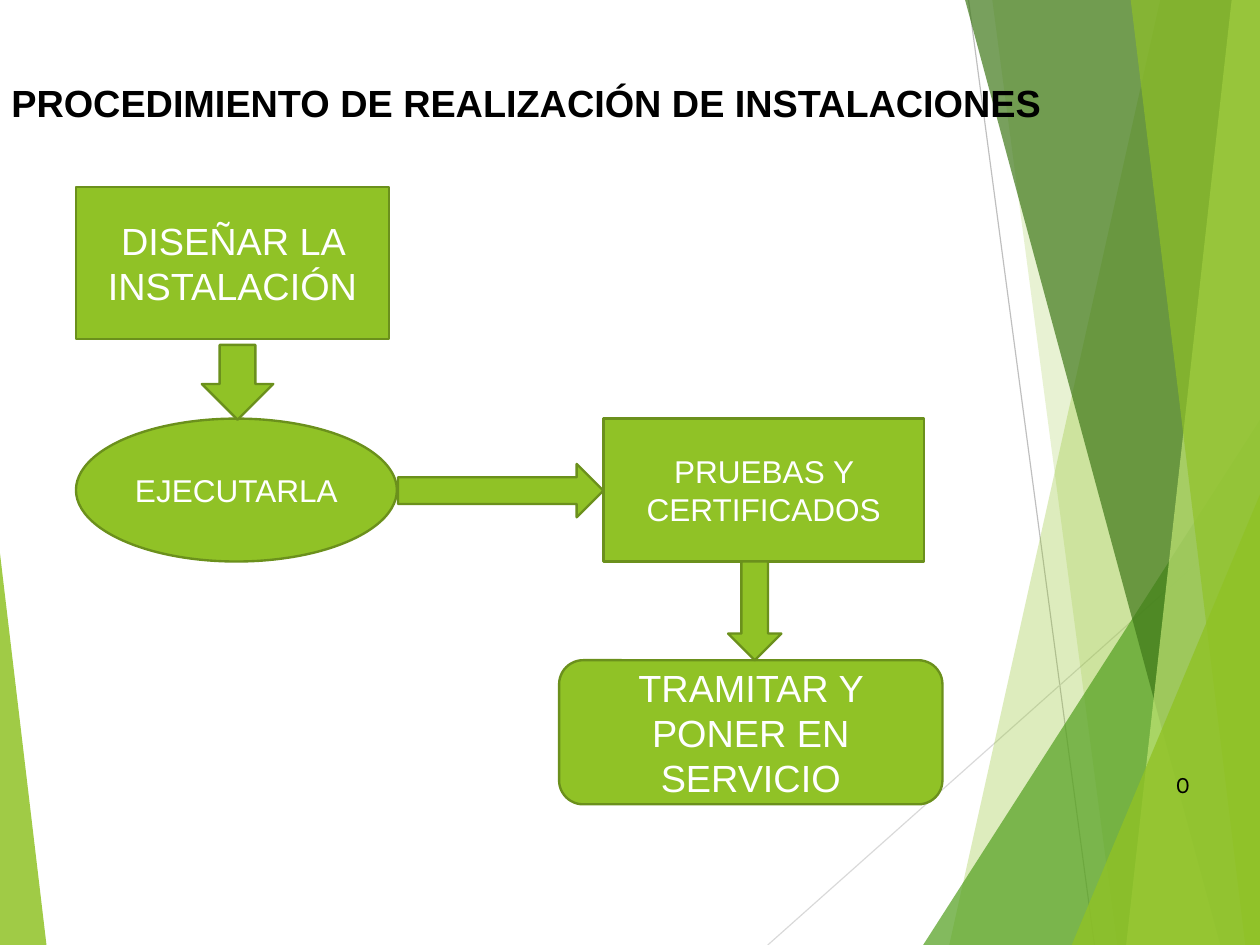
from lxml.etree import SubElement
from pptx import Presentation
from pptx.dml.color import RGBColor
from pptx.enum.shapes import MSO_CONNECTOR, MSO_SHAPE
from pptx.enum.text import MSO_ANCHOR, MSO_AUTO_SIZE, PP_ALIGN
from pptx.oxml.ns import qn
from pptx.util import Inches, Pt

COLORS = {
    "green": "90C226",
    "outline": "6B901C",
    "leaf": "54A021",
    "forest": "3F7819",
    "lime": "C0E474",
    "gray": "BFBFBF",
    "light gray": "D9D9D9",
    "white": "FFFFFF",
    "black": "000000",
}
WIDTH, HEIGHT = 11.11, 8.33


def color(name):
    return RGBColor.from_string(COLORS[name])


def fill_facet(shape, color_name, opacity):
    shape.shadow.inherit = False
    shape.line.fill.background()
    shape.fill.solid()
    shape.fill.fore_color.rgb = color(color_name)
    color_element = shape.element.spPr.find(qn("a:solidFill"))[0]
    SubElement(color_element, qn("a:alpha")).set("val", str(opacity * 1000))


presentation = Presentation()
presentation.slide_width = Inches(WIDTH)
presentation.slide_height = Inches(HEIGHT)
slide = presentation.slides.add_slide(presentation.slide_layouts[5])
shapes = slide.shapes

for start_x, start_y, end_x, color_name in [
    (8.54, 0, 9.65, "gray"),
    (WIDTH, 4.47, 6.77, "light gray"),
]:
    connector = shapes.add_connector(
        MSO_CONNECTOR.STRAIGHT,
        Inches(start_x), Inches(start_y), Inches(end_x), Inches(HEIGHT),
    )
    connector.line.color.rgb = color(color_name)
    connector.line.width = Pt(0.75)
    SubElement(connector.element.spPr, qn("a:effectLst"))

facets = [
    ("band", 10.23, 8.37, "green", 30),
    ("band", 8.75, 9.85, "green", 20),
    ("triangle", 8.14, 3.7, 2.97, 1, "leaf", 72),
    ("band", 8.51, 10.76, "forest", 70),
    ("band", 10.86, 9.93, "lime", 70),
    ("band", 9.97, 10.98, "green", 65),
    ("triangle", 9.45, 4.36, 1.66, 1, "green", 80),
    ("triangle", 0, 4.88, 0.41, 0, "green", 85),
]
for kind, *geometry, color_name, opacity in facets:
    if kind == "band":
        top_x, bottom_x = geometry
        builder = shapes.build_freeform(Inches(top_x), 0)
        corners = [(WIDTH, 0), (WIDTH, HEIGHT), (bottom_x, HEIGHT)]
        builder.add_line_segments([(Inches(x), Inches(y)) for x, y in corners])
        facet = builder.convert_to_shape()
    else:
        left, top, width, apex = geometry
        facet = shapes.add_shape(
            MSO_SHAPE.ISOSCELES_TRIANGLE,
            Inches(left), Inches(top), Inches(width), Inches(HEIGHT - top),
        )
        facet.adjustments[0] = apex
    fill_facet(facet, color_name, opacity)

page_number = shapes.add_textbox(Inches(10.27), Inches(6.74), Inches(0.47), Inches(0.35))
page_number.text_frame.word_wrap = True
paragraph = page_number.text_frame.paragraphs[0]
paragraph.text = "0"
paragraph.font.name = "Karla"
paragraph.font.size = Pt(15)
paragraph.font.color.rgb = color("black")

title = shapes.title
title.left, title.top = Inches(0), Inches(0.65)
title.width, title.height = Inches(9.29), Inches(0.73)
title.text_frame.auto_size = MSO_AUTO_SIZE.NONE
title.text_frame.vertical_anchor = MSO_ANCHOR.TOP
title.text_frame.margin_right = 0
paragraph = title.text_frame.paragraphs[0]
paragraph.text = "PROCEDIMIENTO DE REALIZACIÓN DE INSTALACIONES"
paragraph.alignment = PP_ALIGN.LEFT
paragraph.font.name = "Arial"
paragraph.font.size = Pt(24)
paragraph.font.bold = True
paragraph.font.color.rgb = color("black")
shapes.element.append(title.element)

steps = [
    (MSO_SHAPE.ROUNDED_RECTANGLE, 4.93, 5.82, 3.38, 1.27, "TRAMITAR Y PONER EN SERVICIO", 24),
    (MSO_SHAPE.RECTANGLE, 0.67, 1.65, 2.76, 1.34, "DISEÑAR LA INSTALACIÓN", 24),
    (MSO_SHAPE.OVAL, 0.67, 3.69, 2.83, 1.26, "EJECUTARLA", 20),
    (MSO_SHAPE.RECTANGLE, 5.32, 3.69, 2.83, 1.26, "PRUEBAS Y CERTIFICADOS", 20),
    (MSO_SHAPE.DOWN_ARROW, 1.78, 3.04, 0.63, 0.66, None, None),
    (MSO_SHAPE.RIGHT_ARROW, 3.51, 4.09, 1.81, 0.47, None, None),
    (MSO_SHAPE.DOWN_ARROW, 6.42, 4.95, 0.47, 0.87, None, None),
]
for preset, left, top, width, height, text, size in steps:
    step = shapes.add_shape(preset, Inches(left), Inches(top), Inches(width), Inches(height))
    step.shadow.inherit = False
    step.fill.solid()
    step.fill.fore_color.rgb = color("green")
    step.line.color.rgb = color("outline")
    step.line.width = Pt(1.5)
    if text:
        step.text_frame.word_wrap = True
        step.text_frame.vertical_anchor = MSO_ANCHOR.MIDDLE
        paragraph = step.text_frame.paragraphs[0]
        paragraph.text = text
        paragraph.alignment = PP_ALIGN.CENTER
        paragraph.font.name = "Arial"
        paragraph.font.size = Pt(size)
        paragraph.font.color.rgb = color("white")

presentation.save("out.pptx")
